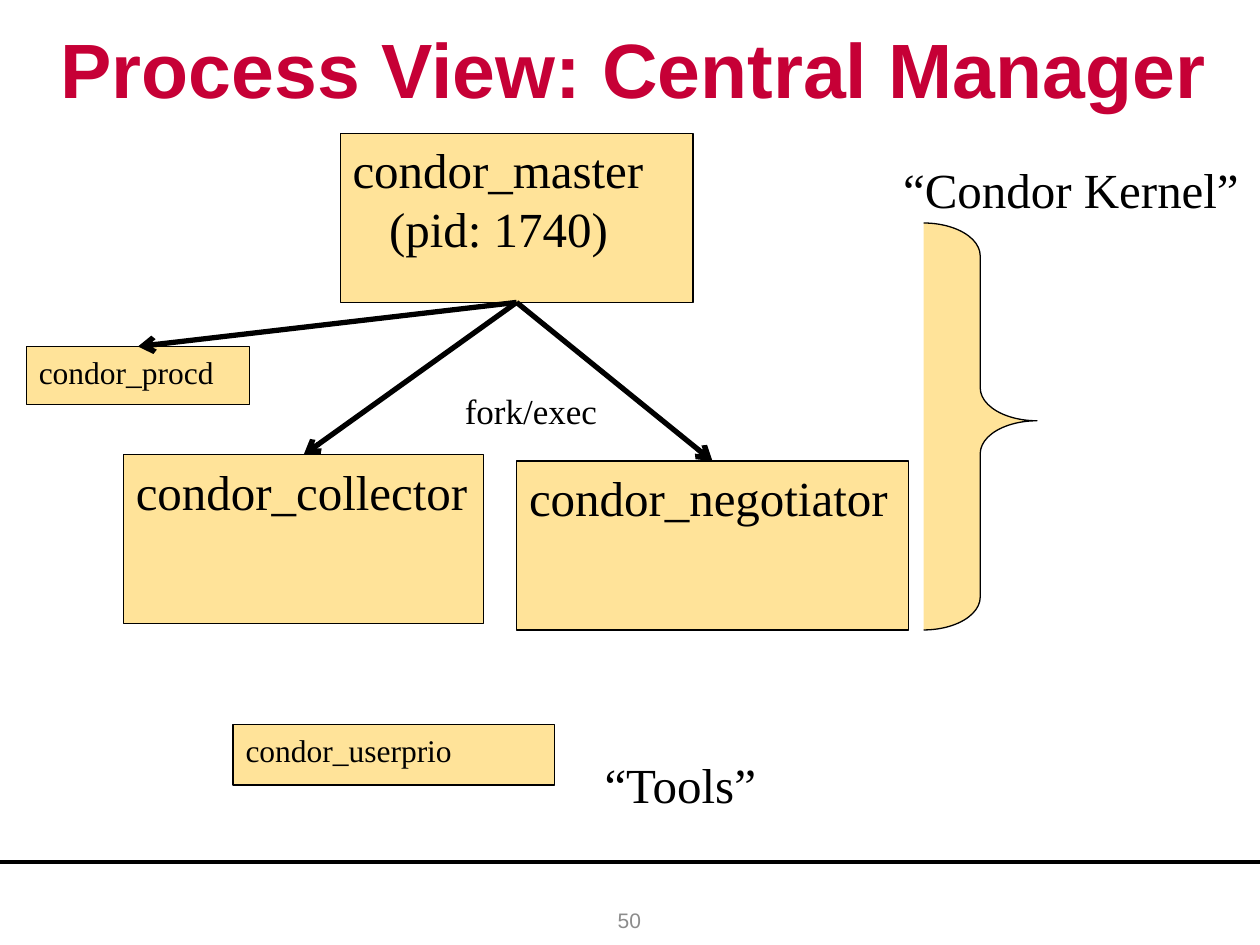
from dataclasses import dataclass

from lxml.etree import SubElement
from pptx import Presentation
from pptx.dml.color import RGBColor as RGB
from pptx.enum.shapes import MSO_CONNECTOR as Link, MSO_SHAPE as Kind
from pptx.enum.text import MSO_ANCHOR as Anchor, PP_ALIGN as Align
from pptx.oxml.ns import qn
from pptx.util import Inches, Pt


@dataclass(frozen=True)
class Theme:
    black: RGB = RGB(0x00, 0x00, 0x00)
    red: RGB = RGB(0xC6, 0x00, 0x36)
    gray: RGB = RGB(0x8C, 0x8C, 0x8C)
    sand: RGB = RGB(0xFF, 0xE3, 0x99)
    sans: str = "Arial"
    serif: str = "Times New Roman"
    title: int = 44
    large: int = 28
    note: int = 20
    small: int = 18
    page: int = 12
    edge: float = 0.75
    rule: float = 2.25
    arrow: float = 3


T = Theme()
BOTTOM, TOP = 2, 0


def style(para, size, name=T.serif, color=T.black, bold=False):
    font = para.font
    font.size = Pt(size)
    font.name = name
    font.bold = bold
    font.color.rgb = color


def add_text(slide, area, text, size, **look):
    box = slide.shapes.add_textbox(*map(Inches, area))
    frame = box.text_frame
    frame.word_wrap = True
    frame.text = text
    style(frame.paragraphs[0], size, **look)
    return frame


def add_head(slide, area, text, size, **look):
    frame = add_text(slide, area, text, size, name=T.sans, **look)
    frame.vertical_anchor = Anchor.MIDDLE
    frame.paragraphs[0].alignment = Align.CENTER


def add_form(slide, kind, area):
    form = slide.shapes.add_shape(kind, *map(Inches, area))
    form.shadow.inherit = False
    form.fill.solid()
    form.fill.fore_color.rgb = T.sand
    form.line.color.rgb = T.black
    form.line.width = Pt(T.edge)
    return form


def add_box(slide, area, text, size):
    box = add_form(slide, Kind.RECTANGLE, area)
    frame = box.text_frame
    frame.vertical_anchor = Anchor.TOP
    frame.text = text
    for para in frame.paragraphs:
        para.alignment = Align.LEFT
        style(para, size)
    return box


def add_brace(slide, area, curve, point):
    brace = add_form(slide, Kind.RIGHT_BRACE, area)
    brace.adjustments[0] = curve
    brace.adjustments[1] = point


def add_line(slide, start, end, width):
    line = slide.shapes.add_connector(Link.STRAIGHT, *map(Inches, start + end))
    line.line.color.rgb = T.black
    line.line.width = Pt(width)
    SubElement(line._element.spPr, qn("a:effectLst"))
    return line


def add_arrow(slide, source, target):
    line = add_line(slide, (0, 0), (1, 1), T.arrow)
    line.begin_connect(source, BOTTOM)
    line.end_connect(target, TOP)
    SubElement(line.line._get_or_add_ln(), qn("a:tailEnd"), type="arrow")


def main():
    deck = Presentation()
    deck.slide_width = Inches(10)
    deck.slide_height = Inches(7.5)
    slide = deck.slides.add_slide(deck.slide_layouts[6])

    add_line(slide, (0, 6.84), (10, 6.84), T.rule)
    add_head(slide, (0.03, 0.04, 10, 1), "Process View: Central Manager",
             T.title, color=T.red, bold=True)
    add_head(slide, (3.83, 7.1, 2.33, 0.4), "50", T.page, color=T.gray)

    master = add_box(slide, (2.7, 1.06, 2.8, 1.34),
                     "condor_master\n(pid: 1740)", T.large)
    pid = master.text_frame.paragraphs[1]
    pid._p.get_or_add_pPr().set("marL", str(Inches(0.29)))

    add_brace(slide, (7.33, 1.77, 0.9, 3.23), 0.29, 0.486)
    for area, text, size in (
        ((7.07, 1.22, 3.53, 0.57), "“Condor Kernel”", T.large),
        ((3.59, 3.04, 1.62, 0.44), "fork/exec", T.note),
        ((4.7, 5.94, 3.53, 0.57), "“Tools”", T.large),
    ):
        add_text(slide, area, text, size)

    add_box(slide, (1.85, 5.75, 2.55, 0.48), "condor_userprio", T.small)
    for area, text, size in (
        ((0.98, 3.61, 2.86, 1.34), "condor_collector", T.large),
        ((0.21, 2.75, 1.77, 0.46), "condor_procd", T.small),
        ((4.1, 3.66, 3.11, 1.34), "condor_negotiator", T.large),
    ):
        child = add_box(slide, area, text, size)
        add_arrow(slide, master, child)

    deck.save("out.pptx")


if __name__ == "__main__":
    main()
